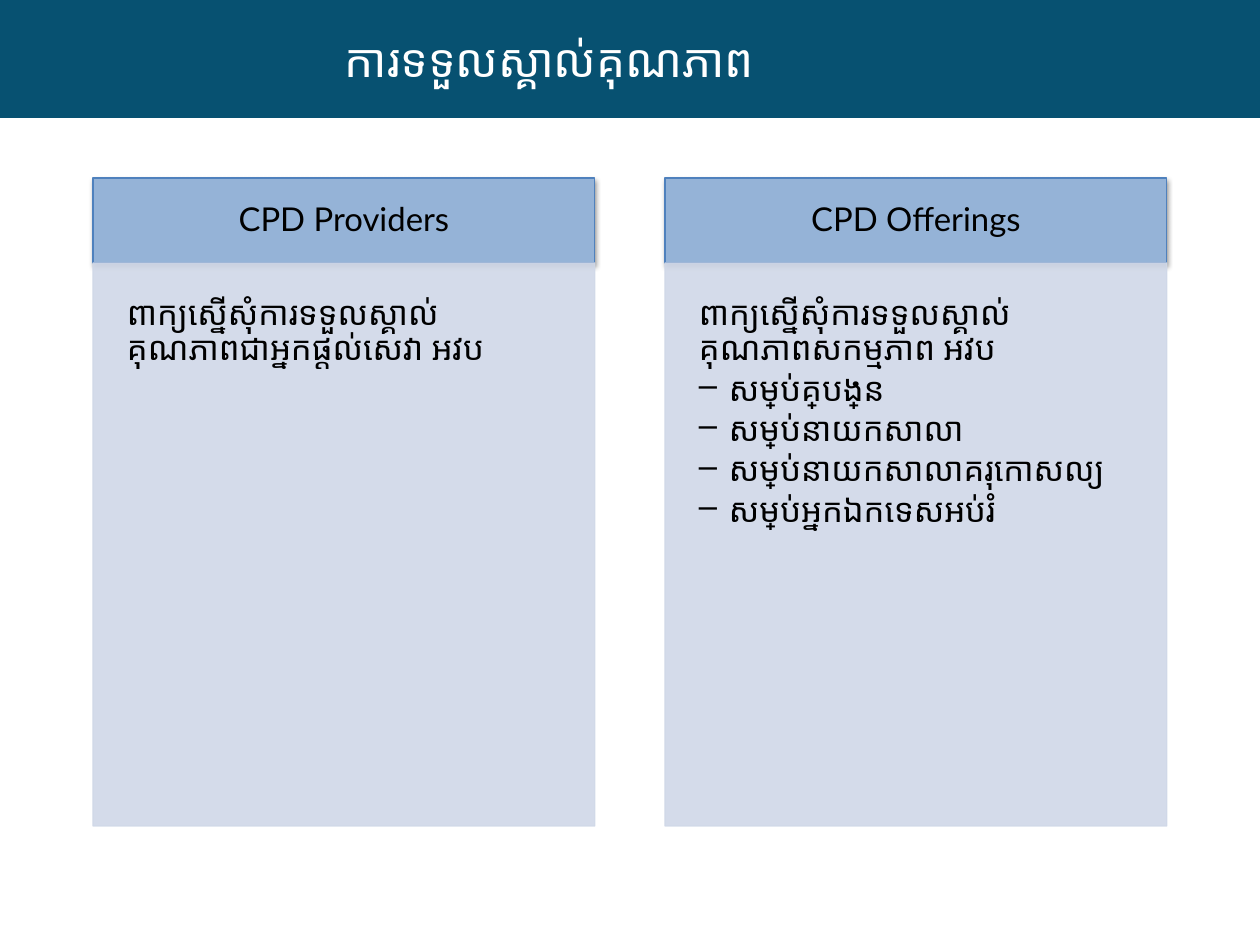
from lxml import etree
from pptx import Presentation
from pptx.dml.color import RGBColor
from pptx.enum.shapes import MSO_SHAPE
from pptx.enum.text import MSO_ANCHOR, PP_ALIGN
from pptx.oxml import parse_xml
from pptx.oxml.ns import nsdecls, qn
from pptx.util import Pt

RECT = MSO_SHAPE.RECTANGLE
TOP, MIDDLE = MSO_ANCHOR.TOP, MSO_ANCHOR.MIDDLE
LEFT, CENTER = PP_ALIGN.LEFT, PP_ALIGN.CENTER

PX = 7741  # EMU per px
COLORS = {
    "banner": "075171", "header": "95B3D7", "header_line": "4F81BD",
    "body": "D0D8E8", "text": "000000", "white": "FFFFFF",
}
HEADER_SHADOW = f"""<a:effectLst {nsdecls("a")}>
  <a:outerShdw blurRad="39400" dist="20300" dir="5400000" rotWithShape="0">
    <a:srgbClr val="000000"><a:alpha val="38000"/></a:srgbClr>
  </a:outerShdw></a:effectLst>"""


def add_box(left, top, width, height, fill, line=None, insets=(0, 0, 0, 0), anchor=MIDDLE):
    box = slide.shapes.add_shape(RECT, left * PX, top * PX, width * PX, height * PX)
    box.shadow.inherit = False
    box.fill.solid()
    box.fill.fore_color.rgb = RGBColor.from_string(COLORS[fill])
    if line:
        box.line.color.rgb = RGBColor.from_string(COLORS[line])
        box.line.width = Pt(0.75)
    else:
        box.line.fill.background()
    frame = box.text_frame
    frame.word_wrap = True
    frame.vertical_anchor = anchor
    frame.margin_left, frame.margin_top, frame.margin_right, frame.margin_bottom = [
        inset * PX for inset in insets]
    return box


def write(paragraph, text, size, font, color, align=LEFT):
    paragraph.text = text
    paragraph.alignment = align
    paragraph.font.size = Pt(size)
    paragraph.font.name = font
    paragraph.font.color.rgb = RGBColor.from_string(COLORS[color])


prs = Presentation()
prs.slide_width, prs.slide_height = 1260 * PX, 945 * PX
slide = prs.slides.add_slide(prs.slide_layouts[6])

# Banner and title
add_box(0, 0, 1260, 118, "banner")
title = slide.shapes.add_textbox(345 * PX, 31 * PX, 670 * PX, 56 * PX).text_frame
title.word_wrap = True
title.vertical_anchor = MIDDLE
title.margin_left = title.margin_top = title.margin_right = title.margin_bottom = 0
write(title.paragraphs[0], "ការទទួលស្គាល់គុណភាព", 28, "Arial", "white")

# Two columns: heading, request, then dashed items
columns = [
    ("CPD Providers", "ពាក្យស្នើសុំការទទួលស្គាល់គុណភាពជាអ្នកផ្ដល់សេវា អវប", []),
    ("CPD Offerings", "ពាក្យស្នើសុំការទទួលស្គាល់គុណភាពសកម្មភាព អវប", [
        "សម្រាប់គ្រូបង្រៀន",
        "សម្រាប់នាយកសាលា",
        "សម្រាប់នាយកសាលាគរុកោសល្យ",
        "សម្រាប់អ្នកឯកទេសអប់រំ",
    ]),
]
COLUMN_LEFT, COLUMN_WIDTH, COLUMN_STEP = 93, 502, 572
DASH_INDENT = 30 * PX

for index, (heading, request, items) in enumerate(columns):
    left = COLUMN_LEFT + index * COLUMN_STEP

    # Heading with a soft shadow
    header = add_box(left, 178, COLUMN_WIDTH, 85, "header", "header_line", (19, 11, 19, 11))
    properties = header._element.spPr
    properties.replace(properties.find(qn("a:effectLst")), parse_xml(HEADER_SHADOW))
    heading_line = header.text_frame.paragraphs[0]
    write(heading_line, heading, 20, "Lato", "text", CENTER)
    heading_line.line_spacing = 0.9

    # Body, 90 % opaque in fill and line
    body = add_box(left, 263, COLUMN_WIDTH, 563, "body", "body", (34, 34, 46, 52), TOP)
    for color in body._element.spPr.iter(qn("a:srgbClr")):
        etree.SubElement(color, qn("a:alpha"), val="90000")
    for number, text in enumerate([request] + items):
        frame = body.text_frame
        paragraph = frame.add_paragraph() if number else frame.paragraphs[0]
        write(paragraph, text, 20, "Lato", "text")
        paragraph.line_spacing = 0.9
        paragraph.space_after = Pt(3)
        if number:
            bullet = paragraph._p.get_or_add_pPr()
            bullet.set("marL", str(DASH_INDENT))
            bullet.set("indent", str(-DASH_INDENT))
            dash = parse_xml(f'<a:buChar {nsdecls("a")} char="–"/>')
            bullet.find(qn("a:defRPr")).addprevious(dash)

prs.save("out.pptx")
